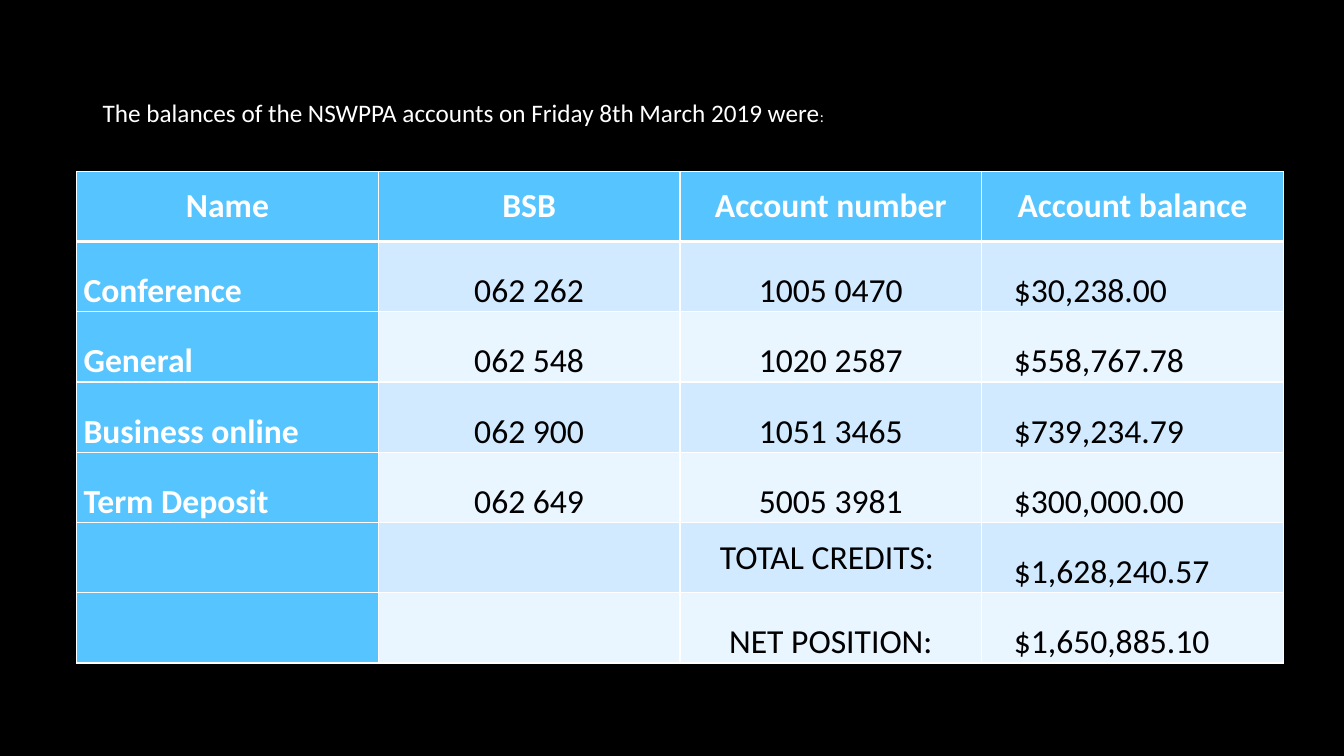
from lxml.etree import SubElement
from pptx import Presentation
from pptx.dml.color import RGBColor
from pptx.enum.text import MSO_ANCHOR, PP_ALIGN
from pptx.oxml.ns import qn
from pptx.util import Inches, Pt


def style(font, size, color, bold=False):
    font.name = "Calibri"
    font.size = Pt(size)
    font.bold = bold
    font.color.rgb = RGBColor.from_string(color)


def border(cell, side, width):
    line = SubElement(cell._tc.get_or_add_tcPr(), qn("a:ln" + side), w=str(Pt(width)))
    fill = SubElement(line, qn("a:solidFill"))
    SubElement(fill, qn("a:srgbClr"), val="FFFFFF")


deck = Presentation()
deck.slide_width, deck.slide_height = Inches(13.33), Inches(7.5)
slide = deck.slides.add_slide(deck.slide_layouts[6])
slide.background.fill.solid()
slide.background.fill.fore_color.rgb = RGBColor.from_string("000000")

rows = [
    ("Name", "BSB", "Account number", "Account balance"),
    ("Conference", "062 262", "1005 0470", "\t$\t30,238.00"),
    ("General", "062 548", "1020 2587", "\t$\t558,767.78"),
    ("Business online", "062 900", "1051 3465", "\t$\t739,234.79"),
    ("Term Deposit", "062 649", "5005 3981", "\t$\t300,000.00"),
    ("", "", "TOTAL CREDITS: ", "\t$\t1,628,240.57"),
    ("", "", "NET POSITION:", "\t$\t1,650,885.10"),
]
table = slide.shapes.add_table(
    len(rows), 4, Inches(0.76), Inches(1.7), Inches(11.97), Inches(4.88)
).table
table.horz_banding = False
table.first_col = True

for r, row in enumerate(rows):
    for c, text in enumerate(row):
        cell = table.cell(r, c)
        head = r == 0 or c == 0
        for side in "LRTB":
            thick = (r, side) in ((0, "B"), (1, "T"))
            border(cell, side, 3 if thick else 1)
        cell.fill.solid()
        shade = "56C5FF" if head else "D1EAFF" if r % 2 else "E9F5FF"
        cell.fill.fore_color.rgb = RGBColor.from_string(shade)
        cell.margin_left = cell.margin_right = Inches(0.07)
        cell.margin_top = cell.margin_bottom = 0
        middle = r == 0 or text.startswith("TOTAL")
        cell.vertical_anchor = MSO_ANCHOR.MIDDLE if middle else MSO_ANCHOR.BOTTOM
        para = cell.text_frame.paragraphs[0]
        para.text = text
        if r == 0 or c in (1, 2):
            para.alignment = PP_ALIGN.CENTER
        elif c == 3:
            tabs = SubElement(para._p.get_or_add_pPr(), qn("a:tabLst"))
            for place, kind in ((0.25, "l"), (1.23, "dec")):
                SubElement(tabs, qn("a:tab"), pos=str(Inches(place)), algn=kind)
        style(para.font, 24, "FFFFFF" if head else "000000", head)
        for run in para.runs:
            style(run.font, 24, "FFFFFF" if head else "000000", head)

intro = slide.shapes.add_textbox(Inches(0.92), Inches(0.92), Inches(7.48), Inches(0.4))
frame = intro.text_frame
frame.word_wrap = True
frame.vertical_anchor = MSO_ANCHOR.MIDDLE
para = frame.paragraphs[0]
for text, size in (
    ("The balances of the NSWPPA accounts on Friday 8th March 2019 were", 18),
    (":", 11),
):
    run = para.add_run()
    run.text = text
    style(run.font, size, "FFFFFF")

deck.save("out.pptx")
